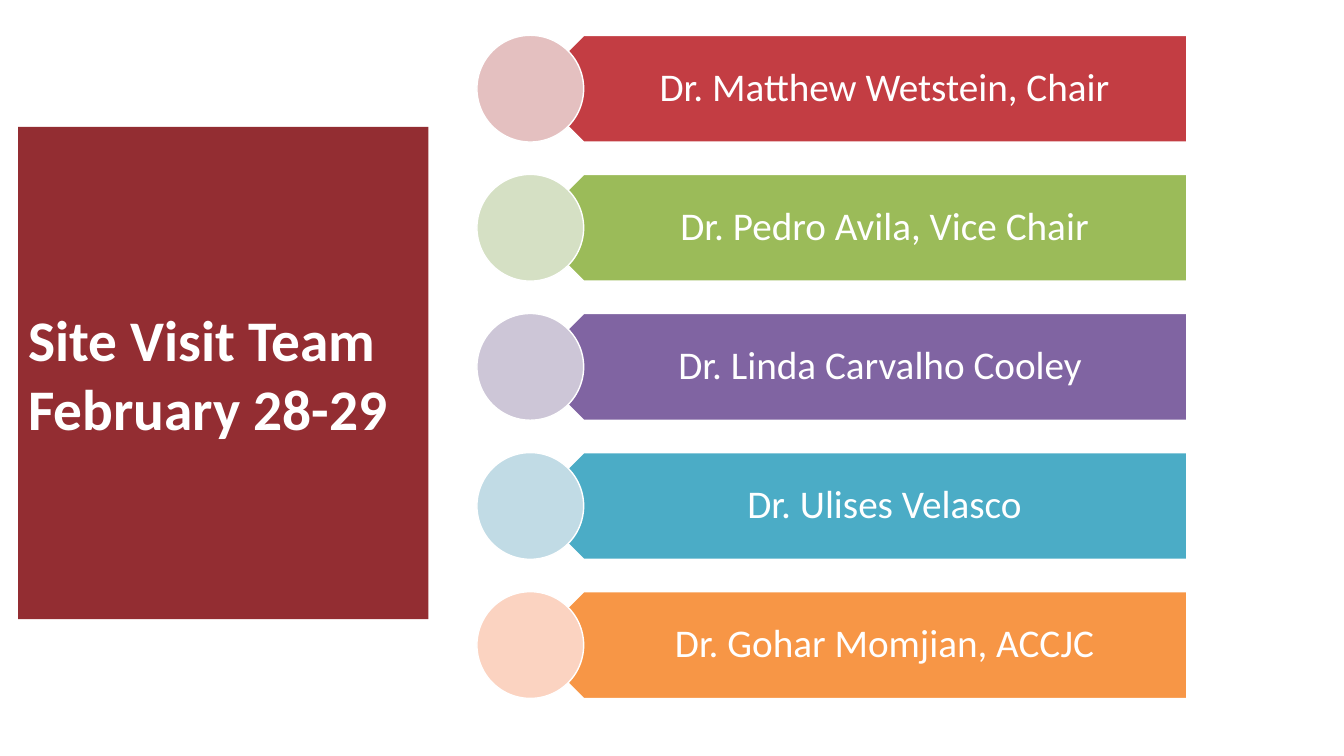
from dataclasses import dataclass

import pptx
import pptx.dml.color
import pptx.enum.shapes
import pptx.enum.text
import pptx.util
from pptx.util import Cm

SHAPE = pptx.enum.shapes.MSO_SHAPE
ALIGN = pptx.enum.text.PP_ALIGN


@dataclass(frozen=True)
class Theme:
    font: str = "Calibri"
    light: str = "FFFFFF"
    title_fill: str = "932D32"
    title_size: int = 41
    member_size: int = 28
    outline: float = 1


THEME = Theme()

# Name, banner colour, disc colour
TEAM = [
    ("Dr. Matthew Wetstein, Chair", "C33D43", "E4C0C0"),
    ("Dr. Pedro Avila, Vice Chair", "9BBB59", "D5E0C4"),
    ("Dr. Linda Carvalho Cooley ", "8064A2", "CDC6D7"),
    ("Dr. Ulises Velasco", "4BACC6", "C1DBE5"),
    ("Dr. Gohar Momjian, ACCJC", "F79646", "FBD3C1"),
]

FIRST_TOP = 0.89
ROW_PITCH = 3.505
ROW_HEIGHT = 2.69
DISC_LEFT = 12.02
BANNER_LEFT = DISC_LEFT + ROW_HEIGHT / 2
BANNER_RIGHT = 29.91
NAME_LEFT = 14.04


def rgb(value):
    return pptx.dml.color.RGBColor.from_string(value)


def add_filled(slide, kind, left, top, width, height, fill, outlined=True):
    shape = slide.shapes.add_shape(kind, Cm(left), Cm(top), Cm(width), Cm(height))
    shape.shadow.inherit = False
    shape.fill.solid()
    shape.fill.fore_color.rgb = rgb(fill)
    if outlined:
        shape.line.color.rgb = rgb(THEME.light)
        shape.line.width = pptx.util.Pt(THEME.outline)
    else:
        shape.line.fill.background()
    return shape


def write_text(shape, text, *, size, bold=False, align=ALIGN.LEFT,
               spacing=1.0, insets=(0.25, 0.13, 0.25, 0.13)):
    """Fill a shape with one paragraph; insets run left, top, right, bottom."""
    frame = shape.text_frame
    frame.word_wrap = True
    frame.vertical_anchor = pptx.enum.text.MSO_ANCHOR.MIDDLE
    (frame.margin_left, frame.margin_top,
     frame.margin_right, frame.margin_bottom) = map(Cm, insets)
    paragraph = frame.paragraphs[0]
    paragraph.text = text
    paragraph.alignment = align
    paragraph.line_spacing = spacing
    for run in paragraph.runs:
        run.font.name = THEME.font
        run.font.size = pptx.util.Pt(size)
        run.font.bold = bold
        run.font.color.rgb = rgb(THEME.light)


def add_title(slide, text):
    panel = add_filled(slide, SHAPE.RECTANGLE, 0.46, 3.2, 10.34, 12.4,
                       THEME.title_fill, outlined=False)
    write_text(panel, text, size=THEME.title_size, bold=True)


def add_member(slide, top, name, banner_fill, disc_fill):
    banner = add_filled(slide, SHAPE.PENTAGON, BANNER_LEFT, top,
                        BANNER_RIGHT - BANNER_LEFT, ROW_HEIGHT, banner_fill)
    banner.rotation = 180
    label = slide.shapes.add_textbox(Cm(NAME_LEFT), Cm(top),
                                     Cm(BANNER_RIGHT - NAME_LEFT), Cm(ROW_HEIGHT))
    write_text(label, name, size=THEME.member_size, align=ALIGN.CENTER,
               spacing=0.9, insets=(1.19, 0.3, 0.56, 0.3))
    add_filled(slide, SHAPE.OVAL, DISC_LEFT, top, ROW_HEIGHT, ROW_HEIGHT, disc_fill)


def main():
    presentation = pptx.Presentation()
    presentation.slide_width = Cm(33.87)
    presentation.slide_height = Cm(19.05)
    slide = presentation.slides.add_slide(presentation.slide_layouts[6])
    add_title(slide, "Site Visit Team\nFebruary 28-29")
    for row, member in enumerate(TEAM):
        add_member(slide, FIRST_TOP + row * ROW_PITCH, *member)
    presentation.save("out.pptx")


if __name__ == "__main__":
    main()
